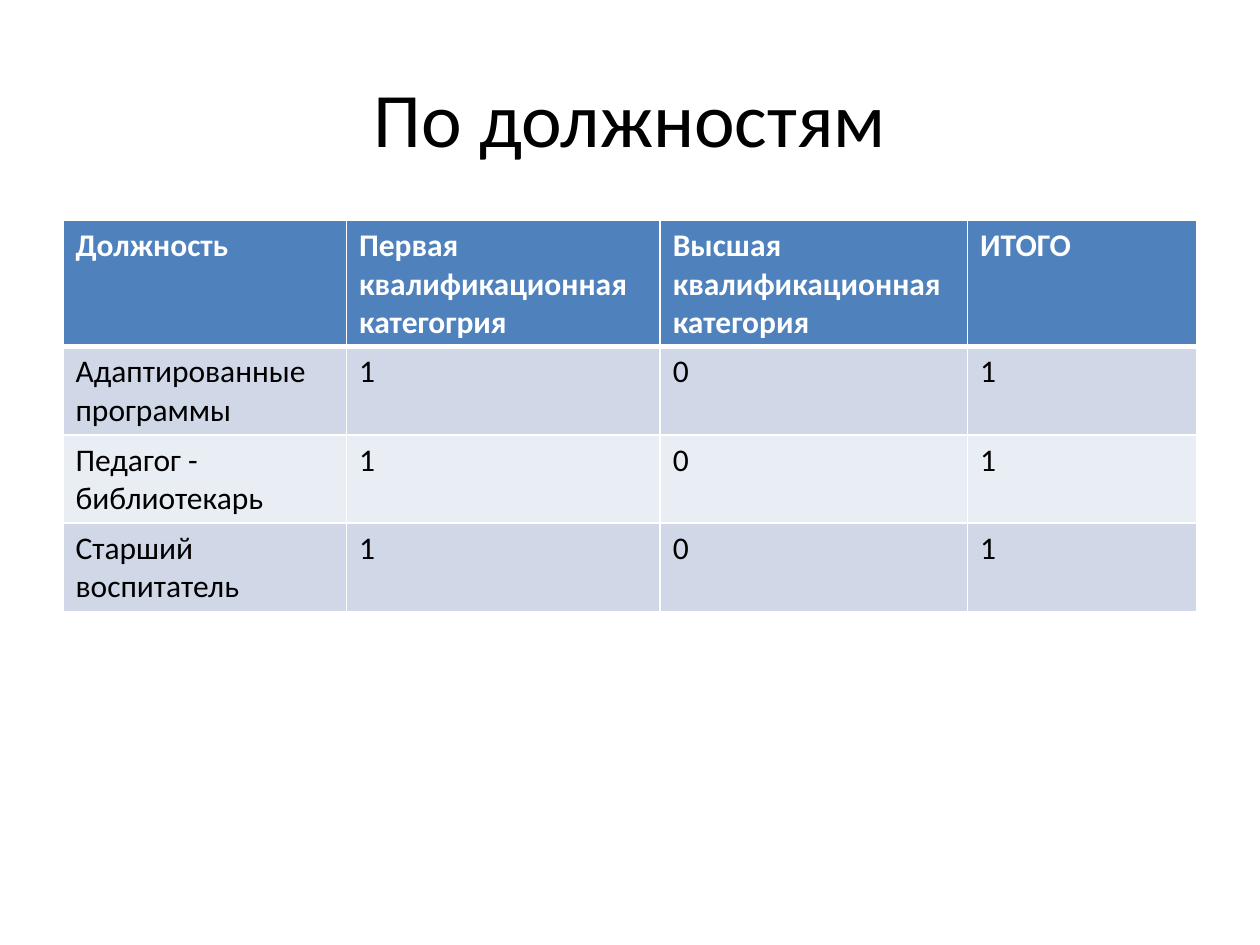
from lxml.etree import SubElement
from pptx import Presentation
from pptx.dml.color import RGBColor as Rgb
from pptx.enum.text import MSO_ANCHOR as Anchor, PP_ALIGN as Align
from pptx.oxml.ns import qn
from pptx.util import Inches, Pt

FONT = "Calibri"
COLORS = {
    "text": "000000",
    "white": "FFFFFF",
    "header": "4F81BD",
    "odd": "D0D8E8",
    "even": "E9EDF4",
}
COLUMN_WIDTHS = [2.25, 2.49, 2.44, 1.82]
ROW_HEIGHT = 0.41
ROWS = [
    ["Должность", "Первая квалификационная категогрия",
     "Высшая квалификационная категория", "ИТОГО"],
    ["Адаптированные программы", "1", "0", "1"],
    ["Педагог - библиотекарь", "1", "0", "1"],
    ["Старший воспитатель", "1", "0", "1"],
]


def add_span(para, text, size, color, bold=False):
    span = para.add_run()
    span.text = text
    span.font.name = FONT
    span.font.size = Pt(size)
    span.font.bold = bold
    span.font.color.rgb = Rgb.from_string(COLORS[color])


def add_title(page, text):
    box = page.shapes.add_textbox(Inches(0.5), Inches(0.3), Inches(9), Inches(1.25))
    frame = box.text_frame
    frame.word_wrap = True
    frame.vertical_anchor = Anchor.MIDDLE
    para = frame.paragraphs[0]
    para.alignment = Align.CENTER
    add_span(para, text, 44, "text")


def set_borders(cell, widths):
    properties = cell._tc.get_or_add_tcPr()
    for side, width in widths.items():
        line = SubElement(properties, qn(f"a:ln{side}"), w=str(Pt(width)))
        fill = SubElement(line, qn("a:solidFill"))
        SubElement(fill, qn("a:srgbClr"), val=COLORS["white"])


def fill_cell(cell, text, row):
    header = row == 0
    set_borders(cell, {"L": 1, "R": 1, "T": 3 if row == 1 else 1, "B": 3 if header else 1})
    shade = "header" if header else "odd" if row % 2 else "even"
    cell.fill.solid()
    cell.fill.fore_color.rgb = Rgb.from_string(COLORS[shade])
    add_span(cell.text_frame.paragraphs[0], text, 18, "white" if header else "text", header)


def add_positions_table(page):
    frame = page.shapes.add_table(
        len(ROWS), len(COLUMN_WIDTHS), Inches(0.5), Inches(1.75),
        Inches(sum(COLUMN_WIDTHS)), Inches(ROW_HEIGHT * len(ROWS)))
    table = frame.table
    for column, width in zip(table.columns, COLUMN_WIDTHS):
        column.width = Inches(width)
    for row, texts in enumerate(ROWS):
        for column, text in enumerate(texts):
            fill_cell(table.cell(row, column), text, row)


def main():
    deck = Presentation()
    deck.slide_width, deck.slide_height = Inches(10), Inches(7.5)
    page = deck.slides.add_slide(deck.slide_layouts[6])
    add_title(page, "По должностям")
    add_positions_table(page)
    deck.save("out.pptx")


if __name__ == "__main__":
    main()
